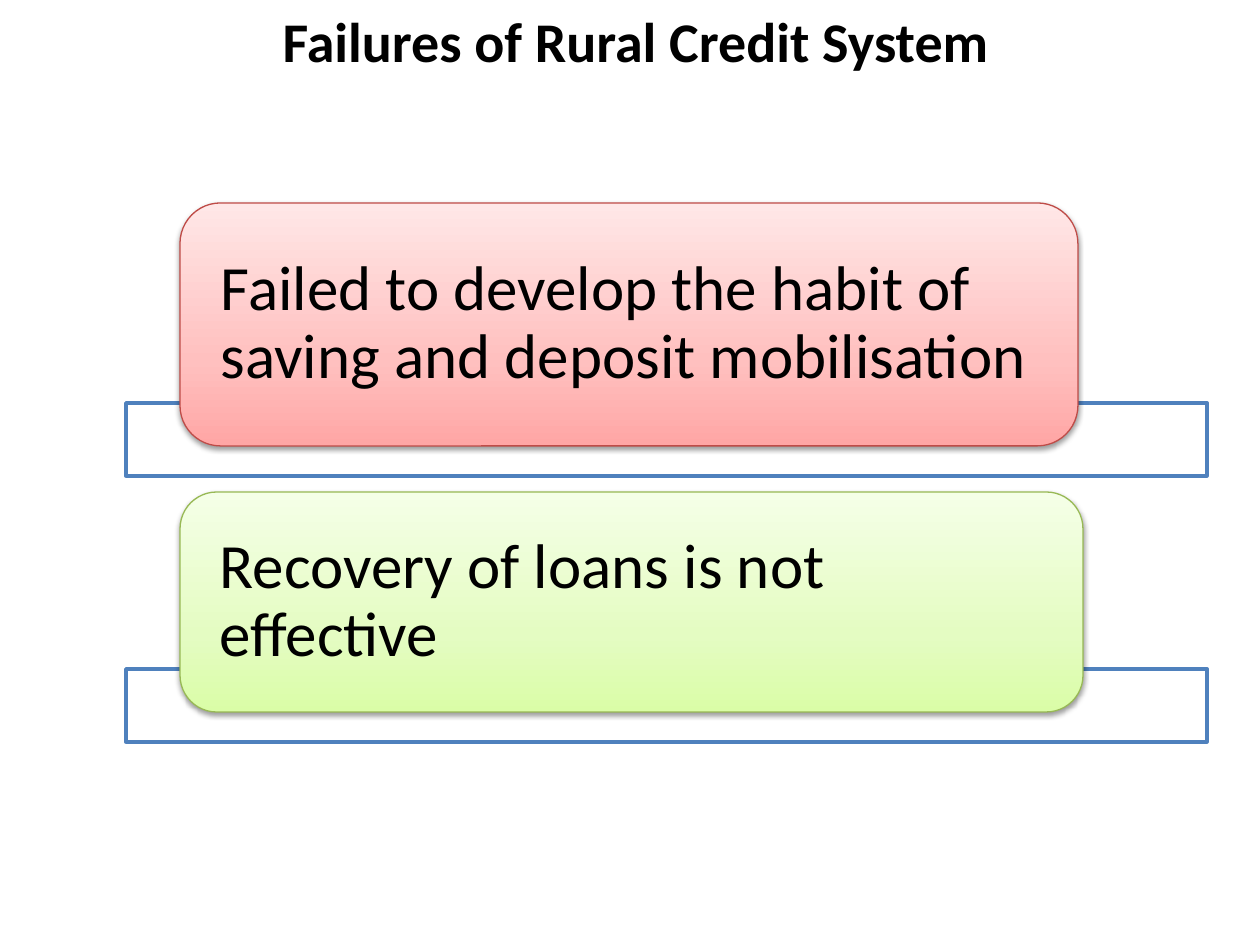
from copy import deepcopy
from pptx import Presentation
from pptx.dml.color import RGBColor
from pptx.enum.shapes import MSO_SHAPE
from pptx.enum.text import MSO_ANCHOR, MSO_AUTO_SIZE, PP_ALIGN
from pptx.oxml import parse_xml
from pptx.oxml.ns import nsdecls, qn
from pptx.util import Emu, Pt

SCALE = 914400 // 126
CARDS = [
    ("Failed to develop the habit of saving and deposit mobilisation",
     (180, 203, 898, 243), "BF4C48", ("FFA6A5", "FFC0BF", "FFE7E7")),
    ("Recovery of loans is not effective",
     (180, 492, 903, 220), "98B955", ("DAFDA7", "E4FCC2", "F5FFE7")),
]


def px(size):
    """Turn pixels into EMU."""
    return Emu(size * SCALE)


def color(code):
    """Turn a hex string into a colour."""
    return RGBColor.from_string(code)


def write(para, text, size, bold=False):
    """Add one black run to a paragraph."""
    run = para.add_run()
    run.text = text
    font = run.font
    font.name, font.size, font.bold = "Calibri", Pt(size), bold
    font.color.rgb = color("000000")


def shape(slide, kind, box, edge, width):
    """Add an outlined shape without a shadow."""
    item = slide.shapes.add_shape(kind, *map(px, box))
    item.shadow.inherit = False
    item.line.color.rgb = color(edge)
    item.line.width = Pt(width)
    return item


def shade(item, tones):
    """Fill a shape with three tones that rise from its foot."""
    item.fill.gradient()
    item.fill.gradient_angle = 90
    stops = item._element.spPr.find(".//" + qn("a:gsLst"))
    stops.insert(1, deepcopy(stops[0]))
    for stop, tone, place in zip(item.fill.gradient_stops, tones, (0, 0.35, 1)):
        stop.color.rgb = color(tone)
        stop.position = place


def drop(item):
    """Give a shape a soft shadow below it."""
    item._element.spPr.find(qn("a:effectLst")).append(parse_xml(
        f'<a:outerShdw {nsdecls("a")} blurRad="{Pt(3.1)}" dist="{Pt(1.6)}" '
        'dir="5400000" rotWithShape="0"><a:srgbClr val="000000">'
        '<a:alpha val="38000"/></a:srgbClr></a:outerShdw>'))


def head(slide, text, box):
    """Place the slide title in its box."""
    title = slide.shapes.title
    title.left, title.top, title.width, title.height = map(px, box)
    frame = title.text_frame
    frame.auto_size = MSO_AUTO_SIZE.NONE
    frame.vertical_anchor = MSO_ANCHOR.TOP
    para = frame.paragraphs[0]
    para.alignment = PP_ALIGN.CENTER
    write(para, text, 32, True)


def card(slide, text, box, edge, tones):
    """Draw a bar and the text card that overlaps it."""
    left, top, width, height = box
    bar = shape(slide, MSO_SHAPE.RECTANGLE,
                (left - 54, top + height - 43, 1081, 73), "4F81BD", 2)
    bar.fill.solid()
    bar.fill.fore_color.rgb = color("FFFFFF")
    item = shape(slide, MSO_SHAPE.ROUNDED_RECTANGLE, box, edge, 0.75)
    shade(item, tones)
    drop(item)
    frame = item.text_frame
    frame.word_wrap = True
    frame.vertical_anchor = MSO_ANCHOR.MIDDLE
    frame.margin_left = frame.margin_right = px(29)
    frame.margin_top = frame.margin_bottom = 0
    para = frame.paragraphs[0]
    para.alignment = PP_ALIGN.LEFT
    para.line_spacing = 0.9
    write(para, text, 36)


def main():
    """Build the slide and save it."""
    deck = Presentation()
    deck.slide_width, deck.slide_height = px(1260), px(945)
    slide = deck.slides.add_slide(deck.slide_layouts[5])
    head(slide, "Failures of Rural Credit System", (12, 0, 1248, 90))
    for entry in CARDS:
        card(slide, *entry)
    deck.save("out.pptx")


if __name__ == "__main__":
    main()
